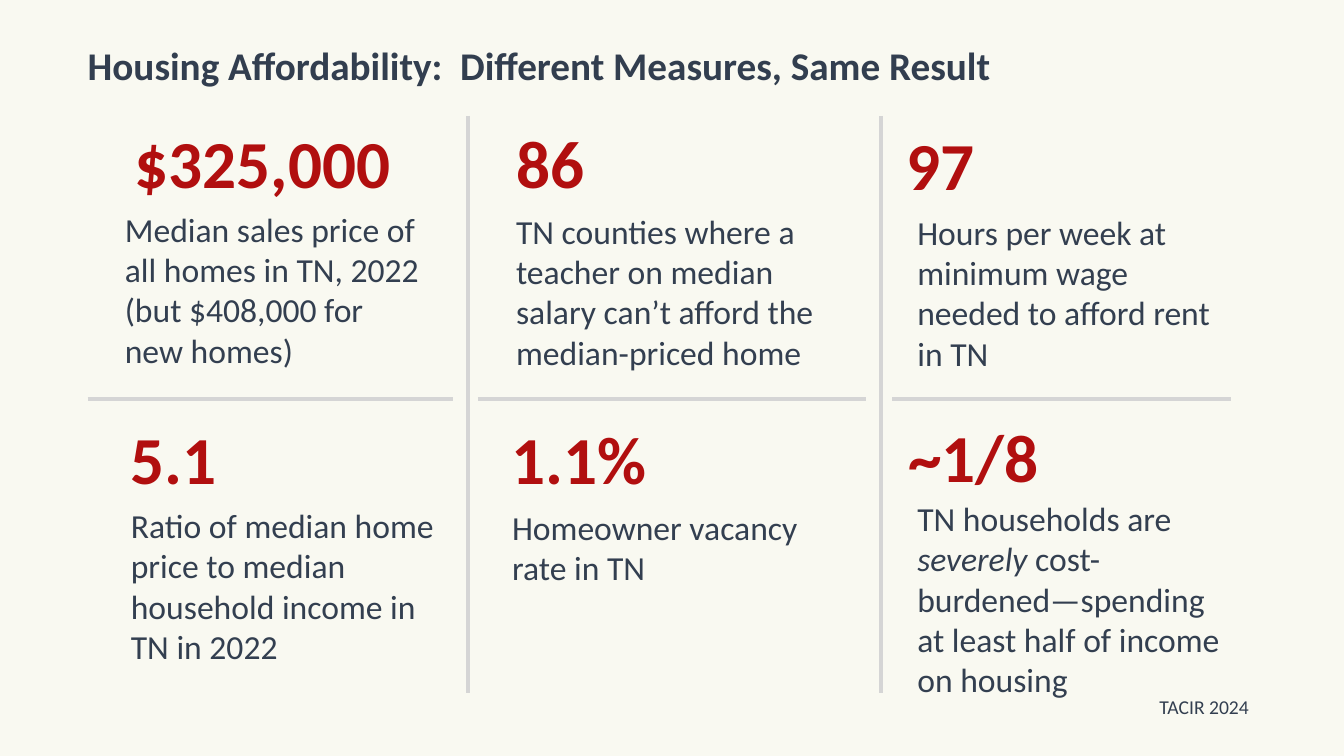
from lxml import etree
from pptx import Presentation
from pptx.dml.color import RGBColor
from pptx.enum import shapes, text
from pptx.oxml import ns
from pptx.util import Inches, Pt

SLATE, RED, GREY, CREAM = "333F50", "B10F0F", "D5D5D5", "F9F9F1"
FIGURE = {"size": Pt(48), "bold": True}
CAPTION = {"size": Pt(24)}

# figure, its left and top; caption runs (text, italic), their left, top, width, height
MEASURES = [
    ("$325,000", 1.24, 1.15,
     [("Median sales price of all homes in TN, 2022 (but $408,000 for new homes)", False)],
     (1.14, 2.02, 3.2, 1.72)),
    ("86", 5.02, 1.15,
     [("TN counties where a teacher on median salary can’t afford the median-priced home", False)],
     (5.02, 2.04, 3.52, 1.72)),
    ("97", 8.89, 1.17,
     [("Hours per week at minimum wage needed to afford rent in TN", False)],
     (9, 2.05, 3.3, 1.72)),
    ("5.1", 1.2, 4.09,
     [("Ratio of median home price to median household income in TN in 2022", False)],
     (1.2, 4.96, 3.4, 1.72)),
    ("1.1%", 4.98, 4.09,
     [("Homeowner vacancy rate in TN", False)],
     (4.98, 4.98, 3.52, 0.91)),
    ("~1/8", 8.91, 4.07,
     [("TN households are ", False), ("severely", True),
      (" cost-burdened—spending at least half of income on housing", False)],
     (9, 4.89, 3.3, 2.12)),
]


def rgb(value):
    return RGBColor.from_string(value)


def place(sp, box):
    for name, value in zip(("left", "top", "width", "height"), box):
        setattr(sp, name, Inches(value))


def write(tf, runs, color, fmt, wrap=True):
    """Fill a text frame with one left-aligned paragraph of (text, italic) runs."""
    frame = {"word_wrap": wrap, "vertical_anchor": text.MSO_ANCHOR.TOP,
             "auto_size": text.MSO_AUTO_SIZE.SHAPE_TO_FIT_TEXT}
    for name, value in frame.items():
        setattr(tf, name, value)
    p = tf.paragraphs[0]
    p.alignment = text.PP_ALIGN.LEFT
    for words, italic in runs:
        r = p.add_run()
        r.text = words
        for name, value in {"name": "Calibri", "italic": italic, **fmt}.items():
            setattr(r.font, name, value)
        r.font.color.rgb = rgb(color)


def add_title(slide, words, box):
    title = slide.shapes.title
    place(title, box)
    write(title.text_frame, [(words, False)], "323E4F", {"size": Pt(28), "bold": True})


def add_text(slide, runs, box, color, fmt, wrap=True):
    sp = slide.shapes.add_textbox(*map(Inches, box))
    write(sp.text_frame, runs, color, fmt, wrap)


def add_divider(slide, x1, y1, x2, y2):
    ends = map(Inches, (x1, y1, x2, y2))
    line = slide.shapes.add_connector(shapes.MSO_CONNECTOR.STRAIGHT, *ends)
    line.line.color.rgb = rgb(GREY)
    line.line.width = Pt(2.5)
    etree.SubElement(line._element.spPr, ns.qn("a:effectLst"))


def main():
    prs = Presentation()
    prs.slide_width, prs.slide_height = Inches(13.33), Inches(7.5)
    slide = prs.slides.add_slide(prs.slide_layouts[5])
    slide.background.fill.solid()
    slide.background.fill.fore_color.rgb = rgb(CREAM)

    add_title(slide, "Housing Affordability:  Different Measures, Same Result",
              (0.77, 0.36, 10.41, 0.57))
    for x in (4.64, 8.74):
        add_divider(slide, x, 1.15, x, 6.88)
    for left, right in ((0.87, 4.49), (4.74, 8.59), (8.85, 12.21)):
        add_divider(slide, left, 3.96, right, 3.96)
    for figure, left, top, caption, box in MEASURES:
        add_text(slide, [(figure, False)], (left, top, 3.4, 0.91), RED, FIGURE)
        add_text(slide, caption, box, SLATE, CAPTION)
    add_text(slide, [("TACIR 2024", False)], (11.4, 6.84, 1.18, 0.34),
             SLATE, {"size": Pt(14)}, wrap=False)
    prs.save("out.pptx")


if __name__ == "__main__":
    main()
